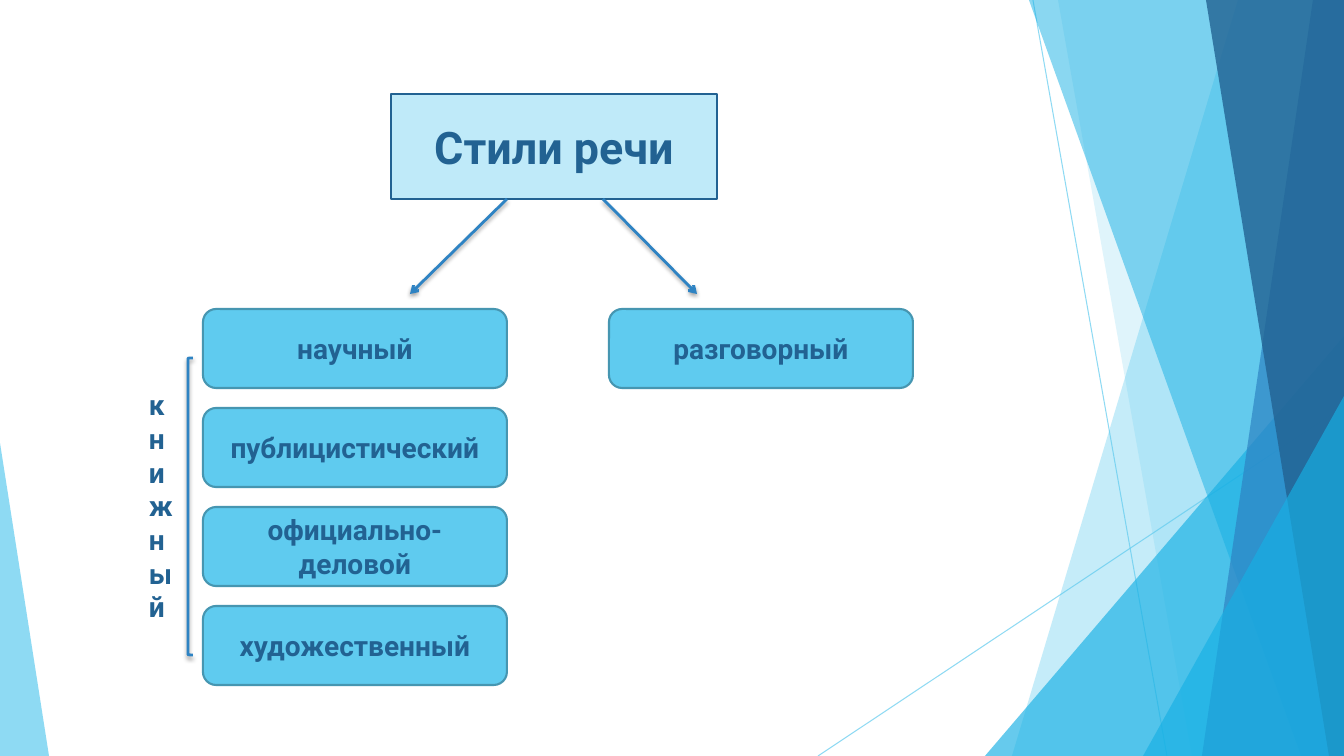
from lxml.etree import SubElement as Sub
from pptx import Presentation
from pptx.dml.color import RGBColor
from pptx.enum.shapes import MSO_CONNECTOR as Conn, MSO_SHAPE as Kind
from pptx.enum.text import MSO_ANCHOR as Anchor, PP_ALIGN as Align
from pptx.oxml.ns import qn
from pptx.util import Pt

PX = 914400 / 100.8
WIDE, HIGH = 1344, 756

SKY = RGBColor(0x5F, 0xCB, 0xEF)
CYAN = RGBColor(0x17, 0xB0, 0xE4)
BLUE = RGBColor(0x2E, 0x83, 0xC3)
NAVY = RGBColor(0x22, 0x62, 0x92)
PALE = RGBColor(0xBF, 0xEA, 0xF9)
TEAL = RGBColor(0x46, 0x96, 0xB1)

# Content
TITLE = "Стили речи"
BOOK = ["научный", "публицистический", "официально-деловой", "художественный"]
TALK = ["разговорный"]
GROUP = "книжный"

# Places in px
TITLE_BOX = (391, 94, 326, 105)
COLUMNS = [(203, BOOK), (609, TALK)]
CARD_TOP, CARD_W, CARD_H, CARD_STEP = 309, 304, 79, 99
ARROWS = [(507, 199, 410, 294), (603, 199, 697, 294)]
BRACKET = (188, 358, 5, 297)
GROUP_BOX = (149, 383, 5, 248)

# Backdrop: thin rays; bands by top and bottom left corner; triangles by box and apex
RAYS = [(1033, 0, 1167, 756), (1344, 406, 818, 756)]
FACETS = [
    ("band", (1238, 1012), SKY, 36),
    ("band", (1058, 1192), SKY, 20),
    ("tri", (985, 336, 359, 420, 1), CYAN, 66),
    ("band", (1029, 1301), CYAN, 50),
    ("band", (1313, 1202), BLUE, 70),
    ("band", (1206, 1329), NAVY, 80),
    ("tri", (1143, 396, 201, 360, 1), CYAN, 66),
    ("tri", (0, 443, 49, 313, 0), SKY, 70),
]

FONT = {"name": "Roboto", "bold": True}


def emu(*vals):
    return [round(v * PX) for v in vals]


def fade(fill, part):
    """Set the opacity of a solid fill, in percent."""
    for tone in part.iter(qn("a:srgbClr")):
        Sub(tone, qn("a:alpha"), val=str(fill * 1000))


def paint(shape, color, edge=None, width=0):
    shape.shadow.inherit = False
    if color is None:
        shape.fill.background()
    else:
        shape.fill.solid()
        shape.fill.fore_color.rgb = color
    if edge is None:
        shape.line.fill.background()
    else:
        shape.line.color.rgb = edge
        shape.line.width = Pt(width)


def write(shape, text, size, align):
    frame = shape.text_frame
    frame.word_wrap = True
    para = frame.paragraphs[0]
    para.alignment = align
    run = para.add_run()
    run.text = text
    for key, val in {**FONT, "size": Pt(size)}.items():
        setattr(run.font, key, val)
    run.font.color.rgb = NAVY
    return frame


def link(slide, ends, color, width):
    line = slide.shapes.add_connector(Conn.STRAIGHT, *emu(*ends))
    line.line.color.rgb = color
    line.line.width = Pt(width)
    return line, Sub(line._element.spPr, qn("a:effectLst"))


def shade(effects):
    drop = Sub(effects, qn("a:outerShdw"), blurRad=str(Pt(3)), dist=str(Pt(2)),
               dir="5400000", rotWithShape="0")
    tone = Sub(drop, qn("a:srgbClr"), val="000000")
    Sub(tone, qn("a:alpha"), val="35000")


def draw_back(slide):
    for ends in RAYS:
        ray, _ = link(slide, ends, SKY, 0.75)
        fade(70, ray._element.spPr)
    for kind, place, color, solid in FACETS:
        if kind == "band":
            top, low = place
            form = slide.shapes.build_freeform(top, 0, scale=PX)
            form.add_line_segments([(WIDE, 0), (WIDE, HIGH), (low, HIGH)])
            facet = form.convert_to_shape()
        else:
            *box, apex = place
            facet = slide.shapes.add_shape(Kind.ISOSCELES_TRIANGLE, *emu(*box))
            facet.adjustments[0] = apex
        paint(facet, color)
        fade(solid, facet._element.spPr)


def draw_tree(slide):
    # Title
    title = slide.shapes.title
    title.left, title.top, title.width, title.height = emu(*TITLE_BOX)
    title.fill.solid()
    title.fill.fore_color.rgb = PALE
    title.line.color.rgb = NAVY
    title.line.width = Pt(1.5)
    write(title, TITLE, 32, Align.CENTER).vertical_anchor = Anchor.MIDDLE

    # Arrows
    for ends in ARROWS:
        arrow, effects = link(slide, ends, BLUE, 2)
        Sub(arrow.line._get_or_add_ln(), qn("a:tailEnd"), type="arrow")
        shade(effects)

    # Style cards
    for left, names in COLUMNS:
        for row, name in enumerate(names):
            box = emu(left, CARD_TOP + row * CARD_STEP, CARD_W, CARD_H)
            card = slide.shapes.add_shape(Kind.ROUNDED_RECTANGLE, *box)
            paint(card, SKY, TEAL, 1.5)
            write(card, name, 20, Align.CENTER).vertical_anchor = Anchor.MIDDLE

    # Bracket and its upright label
    brace = slide.shapes.add_shape(Kind.LEFT_BRACKET, *emu(*BRACKET))
    paint(brace, None, BLUE, 2)
    shade(brace._element.spPr.find(qn("a:effectLst")))
    label = slide.shapes.add_textbox(*emu(*GROUP_BOX))
    frame = write(label, GROUP, 20, Align.LEFT)
    frame.margin_left = frame.margin_right = 0


def main():
    deck = Presentation()
    deck.slide_width, deck.slide_height = emu(WIDE, HIGH)
    slide = deck.slides.add_slide(deck.slide_layouts[5])
    draw_back(slide)
    draw_tree(slide)
    deck.save("out.pptx")


if __name__ == "__main__":
    main()
